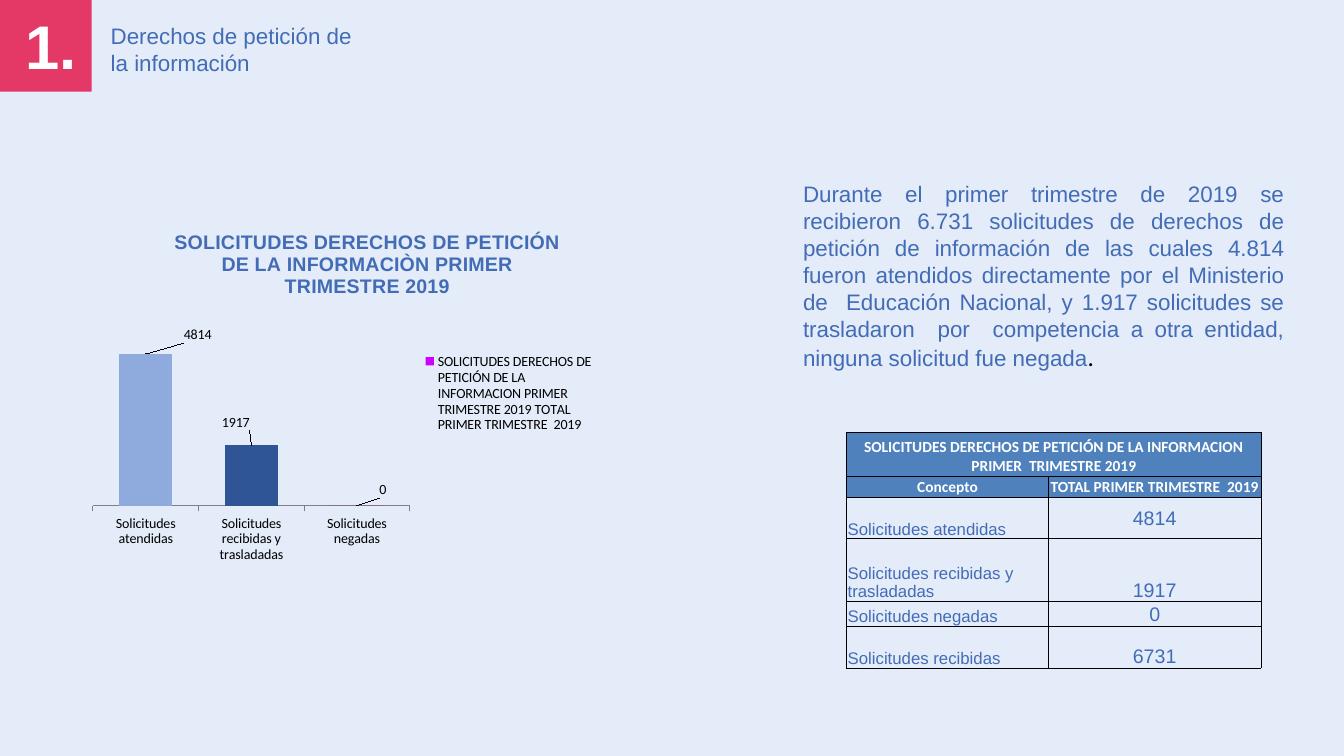
"""Build the slide on information petition rights for the first quarter of 2019."""
from dataclasses import dataclass
from typing import Optional

from lxml import etree
from pptx import Presentation
from pptx import util as u
from pptx.chart import data as chart_data
from pptx.dml import color
from pptx.enum import chart as chart_enum
from pptx.enum import shapes, text
from pptx.oxml import ns

COLORS = {
    "background": "E3ECF8", "badge": "E43866", "blue": "436CB7", "header": "4F81BD",
    "white": "FFFFFF", "black": "000000", "axis": "808080", "series": "CC00FF",
    "light_bar": "8FAADC", "dark_bar": "2F5597",
}
CENTER, LEFT, JUSTIFY = text.PP_ALIGN.CENTER, text.PP_ALIGN.LEFT, text.PP_ALIGN.JUSTIFY
BOTTOM, MIDDLE = text.MSO_ANCHOR.BOTTOM, text.MSO_ANCHOR.MIDDLE


@dataclass
class Run:
    words: str
    size: float
    color: str = "blue"
    font: str = "Arial"
    bold: bool = False


@dataclass
class Box:
    left: float
    top: float
    width: float
    height: float

    def lengths(self) -> list:
        return [u.Pt(value) for value in (self.left, self.top, self.width, self.height)]


@dataclass
class TextBlock:
    box: Box
    runs: list[Run]
    align: text.PP_ALIGN = LEFT


@dataclass
class Bar:
    category: str
    value: int
    fill: Optional[str]
    label_shift: tuple[float, float]


@dataclass
class Cell:
    run: Run
    align: text.PP_ALIGN = CENTER
    anchor: text.MSO_ANCHOR = BOTTOM
    fill: Optional[str] = None


def rgb(name: str) -> color.RGBColor:
    return color.RGBColor.from_string(COLORS[name])


def paint(fill, name: Optional[str]) -> None:
    if name is None:
        fill.background()
    else:
        fill.solid()
        fill.fore_color.rgb = rgb(name)


def style_font(font, run: Run) -> None:
    font.size, font.name, font.bold = u.Pt(run.size), run.font, run.bold
    font.color.rgb = rgb(run.color)


def add_runs(paragraph, runs: list[Run]) -> None:
    for run in runs:
        added = paragraph.add_run()
        added.text = run.words
        style_font(added.font, run)


def add_text(slide, block: TextBlock) -> None:
    frame = slide.shapes.add_textbox(*block.box.lengths()).text_frame
    frame.word_wrap = True
    frame.auto_size = text.MSO_AUTO_SIZE.SHAPE_TO_FIT_TEXT
    paragraph = frame.paragraphs[0]
    paragraph.alignment = block.align
    add_runs(paragraph, block.runs)


def place(element, index: int, **values: object) -> None:
    for old in element.findall(ns.qn("c:layout")):
        element.remove(old)
    layout = etree.Element(ns.qn("c:layout"))
    manual = etree.SubElement(layout, ns.qn("c:manualLayout"))
    for name, value in values.items():
        etree.SubElement(manual, ns.qn(f"c:{name}")).set("val", str(value))
    element.insert(index, layout)


def add_bar_chart(slide, box: Box, title: str, series_name: str, bars: list[Bar]) -> None:
    data = chart_data.CategoryChartData()
    data.categories = [bar.category for bar in bars]
    data.add_series(series_name, [bar.value for bar in bars])
    kind = chart_enum.XL_CHART_TYPE.COLUMN_CLUSTERED
    chart = slide.shapes.add_chart(kind, *box.lengths(), data).chart
    style_font(chart.font, Run("", 10, "black", "Calibri"))

    chart.has_title = True
    add_runs(chart.chart_title.text_frame.paragraphs[0], [Run(title, 14, bold=True)])
    place(chart.chart_title._element, 1, xMode="edge", yMode="edge", x=0.17, y=0.02)

    chart.has_legend = True
    chart.legend.position = chart_enum.XL_LEGEND_POSITION.RIGHT
    chart.legend.include_in_layout = False
    place(chart.legend._element, 1, xMode="edge", yMode="edge", x=0.65, y=0.38, w=0.34, h=0.24)

    chart.value_axis.visible = False
    chart.value_axis.has_major_gridlines = False
    chart.value_axis.minimum_scale, chart.value_axis.maximum_scale = 0, 6000
    chart.category_axis.major_tick_mark = chart_enum.XL_TICK_MARK.OUTSIDE
    paint(chart.category_axis.format.line.fill, "axis")

    plot = chart.plots[0]
    plot.gap_width = 100
    plot.vary_by_categories = False
    series = plot.series[0]
    paint(series.format.fill, "series")
    series.data_labels.show_value = True
    for index, bar in enumerate(bars):
        point = series.points[index]
        if bar.fill:
            paint(point.format.fill, bar.fill)
        point.data_label.position = chart_enum.XL_LABEL_POSITION.OUTSIDE_END
    for label, bar in zip(series._element.iter(ns.qn("c:dLbl")), bars):
        place(label, 1, x=bar.label_shift[0], y=bar.label_shift[1])
    plot_area = next(chart._chartSpace.iter(ns.qn("c:plotArea")))
    place(plot_area, 0, layoutTarget="inner", xMode="edge", yMode="edge",
          x=0.02, y=0.28, w=0.61, h=0.54)


def add_borders(cell) -> None:
    properties = cell._tc.get_or_add_tcPr()
    for side in ("lnL", "lnR", "lnT", "lnB"):
        line = etree.SubElement(properties, ns.qn(f"a:{side}"), w=str(u.Pt(0.5)))
        fill = etree.SubElement(line, ns.qn("a:solidFill"))
        etree.SubElement(fill, ns.qn("a:srgbClr"), val=COLORS["black"])


def add_grid(slide, box: Box, widths: list[float], heights: list[float],
             rows: list[list[Cell]]) -> None:
    table = slide.shapes.add_table(len(rows), len(widths), *box.lengths()).table
    for column, width in zip(table.columns, widths):
        column.width = u.Pt(width)
    for row, height in zip(table.rows, heights):
        row.height = u.Pt(height)
    for cell in table.iter_cells():
        add_borders(cell)
        cell.fill.background()
    table.cell(0, 0).merge(table.cell(0, 1))
    for row_index, row in enumerate(rows):
        for column_index, content in enumerate(row):
            cell = table.cell(row_index, column_index)
            paint(cell.fill, content.fill)
            cell.margin_left = cell.margin_right = cell.margin_top = u.Pt(0.7)
            cell.margin_bottom = u.Pt(0)
            cell.vertical_anchor = content.anchor
            paragraph = cell.text_frame.paragraphs[0]
            paragraph.alignment = content.align
            add_runs(paragraph, [content.run])


def header(words: str) -> Cell:
    return Cell(Run(words, 11, "white", "Calibri", True), fill="header")


def entry(concept: str, total: int, anchor: text.MSO_ANCHOR = BOTTOM) -> list[Cell]:
    return [Cell(Run(concept, 12), LEFT), Cell(Run(str(total), 14), anchor=anchor)]


def main() -> None:
    presentation = Presentation()
    presentation.slide_width, presentation.slide_height = u.Pt(960), u.Pt(540)
    slide = presentation.slides.add_slide(presentation.slide_layouts[6])
    paint(slide.background.fill, "background")

    badge = slide.shapes.add_shape(shapes.MSO_SHAPE.RECTANGLE, *Box(0, 0, 65.5, 65.5).lengths())
    badge.shadow.inherit = False
    paint(badge.fill, "badge")
    badge.line.fill.background()

    summary = (
        "Durante el primer trimestre de 2019 se recibieron 6.731 solicitudes de derechos de "
        "petición de información de las cuales 4.814 fueron atendidos directamente por el "
        "Ministerio de  Educación Nacional, y 1.917 solicitudes se trasladaron  por  competencia "
        "a otra entidad, ninguna solicitud fue negada")
    for block in (
        TextBlock(Box(11, 2, 54.5, 60.5), [Run("1.", 44, "white", bold=True)]),
        TextBlock(Box(72, 12.2, 195, 46), [Run("Derechos de petición de la información", 16)]),
        TextBlock(Box(566.5, 125.3, 358, 145.5),
                  [Run(summary, 16), Run(".", 18, "black", "Calibri")], JUSTIFY),
    ):
        add_text(slide, block)

    heading = "SOLICITUDES DERECHOS DE PETICIÓN DE LA INFORMACION PRIMER  TRIMESTRE 2019"
    total = "TOTAL PRIMER TRIMESTRE  2019"
    attended, moved, denied = (
        "Solicitudes atendidas", "Solicitudes recibidas y trasladadas", "Solicitudes negadas")
    add_bar_chart(
        slide, Box(59, 156.2, 371, 250),
        "SOLICITUDES DERECHOS DE PETICIÓN DE LA INFORMACIÒN PRIMER TRIMESTRE 2019",
        f"{heading} {total}",
        [Bar(attended, 4814, "light_bar", (0.1, -0.02)),
         Bar(moved, 1917, "dark_bar", (-0.03, -0.03)),
         Bar(denied, 0, None, (0.05, -0.01))])
    add_grid(
        slide, Box(604.8, 308.9, 296, 166), [144, 152], [31, 15, 30, 44.8, 15, 30],
        [[header(heading)], [header("Concepto"), header(total)],
         entry(attended, 4814, MIDDLE), entry(moved, 1917), entry(denied, 0),
         entry("Solicitudes recibidas", 6731)])
    presentation.save("out.pptx")


if __name__ == "__main__":
    main()
